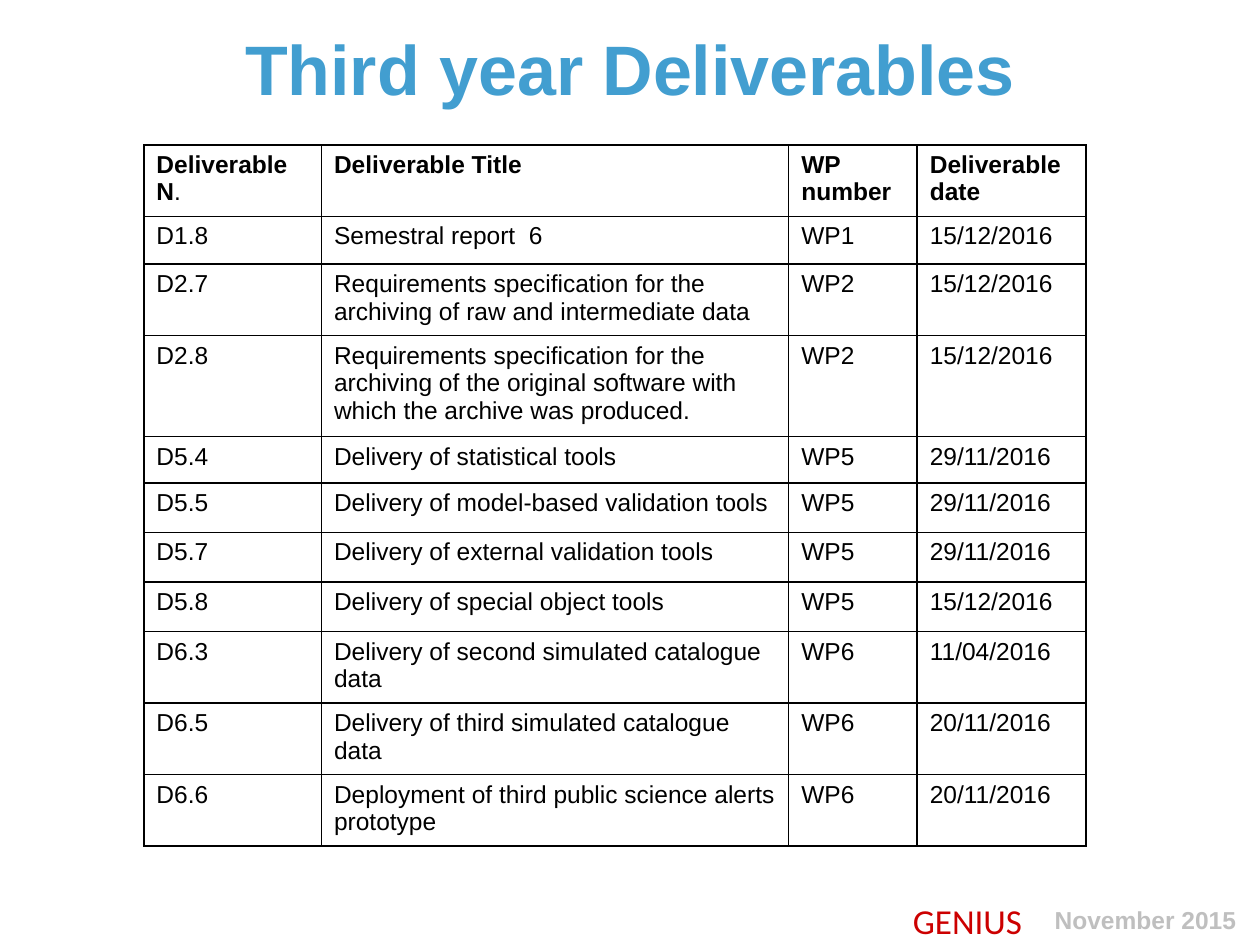
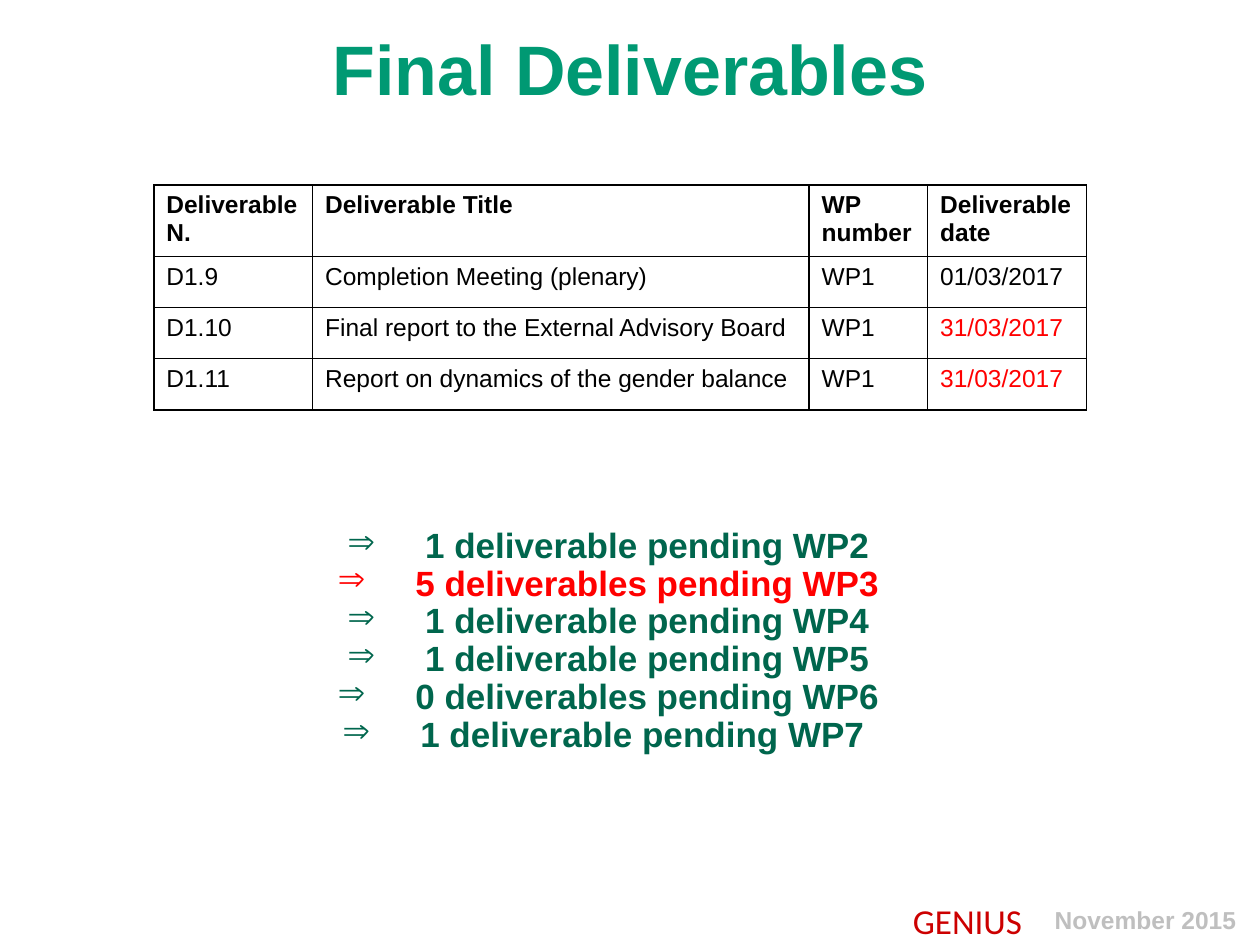
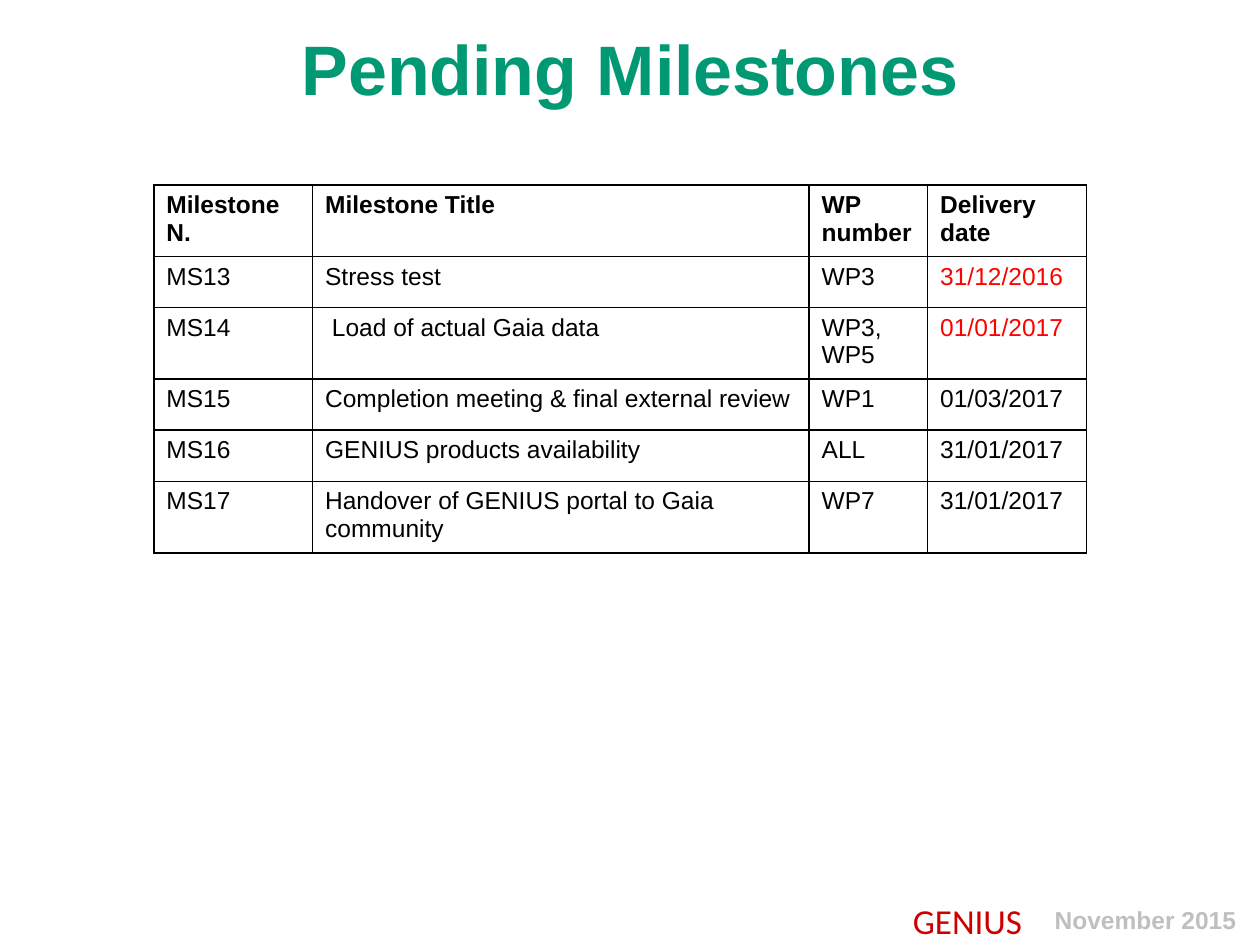
from dataclasses import dataclass

from lxml import etree
from pptx import Presentation
from pptx.dml.color import RGBColor
from pptx.enum import text
from pptx.oxml import ns
from pptx.util import Cm, Pt


@dataclass(frozen=True)
class Theme:
    """Colours, fonts and type sizes shared by the slides."""
    sky: str = "429ED0"
    green: str = "009973"
    dark_green: str = "00664D"
    red: str = "FF0000"
    project_red: str = "CC0000"
    grey: str = "BFBFBF"
    black: str = "000000"
    font: str = "Arial"
    project_font: str = "Calibri"
    title_size: int = 40
    list_size: int = 20
    small_size: int = 14
    tight: float = 0.9


THEME = Theme()
TITLE_BOX = (1.27, 0.33, 22.86, 2.29)
DATE_BOX = (21.01, 18.11, 4.29, 0.86)
PROJECT_BOX = (17.7, 18.11, 3.61, 1.02)
PENDING_BOX = (6.5, 10.52, 11.53, 4.88)
YEAR_BOX = (2.9, 2.92)
FINAL_BOX = (3.1, 3.73)
YEAR_COLUMNS = (3.58, 9.42, 2.59, 3.4)
FINAL_COLUMNS = (3.2, 10.01, 2.39, 3.2)
TWO_LINES = 1.44
FINAL_LINE = 1.03

THIRD_YEAR = [
    ("Deliverable N|.", "Deliverable Title", "WP number", "Deliverable date"),
    ("D1.8", "Semestral report  6", "WP1", "15/12/2016"),
    ("D2.7", "Requirements specification for the archiving of raw and intermediate data",
     "WP2", "15/12/2016"),
    ("D2.8", "Requirements specification for the archiving of the original software "
     "with which the archive was produced.", "WP2", "15/12/2016"),
    ("D5.4", "Delivery of statistical tools", "WP5", "29/11/2016"),
    ("D5.5", "Delivery of model-based validation tools", "WP5", "29/11/2016"),
    ("D5.7", "Delivery of external validation tools", "WP5", "29/11/2016"),
    ("D5.8", "Delivery of special object tools", "WP5", "15/12/2016"),
    ("D6.3", "Delivery of second simulated catalogue data", "WP6", "11/04/2016"),
    ("D6.5", "Delivery of third simulated catalogue data", "WP6", "20/11/2016"),
    ("D6.6", "Deployment of third public science alerts prototype", "WP6", "20/11/2016"),
]
THIRD_YEAR_HEIGHTS = [TWO_LINES, 0.96, TWO_LINES, 2.04, 0.93, 1, 1, 1] + [TWO_LINES] * 3

FINAL = [
    ("Deliverable N.", "Deliverable Title", "WP number", "Deliverable date"),
    ("D1.9", "Completion Meeting (plenary)", "WP1", "01/03/2017"),
    ("D1.10", "Final report to the External Advisory Board", "WP1", "31/03/2017"),
    ("D1.11", "Report on dynamics of the gender balance", "WP1", "31/03/2017"),
]
FINAL_HEIGHTS = [TWO_LINES] + [FINAL_LINE] * 3

MILESTONES = [
    ("Milestone N.", "Milestone Title", "WP number", "Delivery date"),
    ("MS13", "Stress test", "WP3", "31/12/2016"),
    ("MS14", " Load of actual Gaia data", "WP3, WP5", "01/01/2017"),
    ("MS15", "Completion meeting & final external review", "WP1", "01/03/2017"),
    ("MS16", "GENIUS products availability", "ALL", "31/01/2017"),
    ("MS17", "Handover of GENIUS portal to Gaia community", "WP7", "31/01/2017"),
]
MILESTONE_HEIGHTS = [TWO_LINES, FINAL_LINE, TWO_LINES, FINAL_LINE, FINAL_LINE, TWO_LINES]

PENDING = [
    ("1 deliverable pending WP2", THEME.dark_green),
    ("5 deliverables pending WP3", THEME.red),
    ("1 deliverable pending WP4", THEME.dark_green),
    ("1 deliverable pending WP5", THEME.dark_green),
    ("0 deliverables pending WP6", THEME.dark_green),
    ("1 deliverable pending WP7 ", THEME.dark_green),
]


def style(paragraph, size, color, bold=False, font=THEME.font):
    """Set the font of a whole paragraph."""
    paragraph.font.name = font
    paragraph.font.size = Pt(size)
    paragraph.font.bold = bold
    paragraph.font.color.rgb = RGBColor.from_string(color)


def add_frame(slide, box, wrap=True):
    """Add a text box and return its text frame."""
    frame = slide.shapes.add_textbox(*map(Cm, box)).text_frame
    frame.word_wrap = wrap
    return frame


def center(paragraph):
    """Centre a paragraph and tighten its lines."""
    paragraph.alignment = text.PP_ALIGN.CENTER
    paragraph.line_spacing = THEME.tight


def add_title(slide, box, words, color):
    """Add the slide title."""
    frame = add_frame(slide, box)
    frame.vertical_anchor = text.MSO_ANCHOR.MIDDLE
    title = frame.paragraphs[0]
    title.text = words
    center(title)
    style(title, THEME.title_size, color, bold=True)


def add_footer(slide, date_box, project_box):
    """Add the date and the project name."""
    date = add_frame(slide, date_box).paragraphs[0]
    date.text = "November 2015"
    style(date, THEME.small_size, THEME.grey, bold=True)
    project = add_frame(slide, project_box).paragraphs[0]
    project.text = "GENIUS"
    center(project)
    style(project, THEME.list_size, THEME.project_red, font=THEME.project_font)


def add_borders(cell):
    """Draw a thin line on the four sides of a cell."""
    properties = cell._tc.get_or_add_tcPr()
    for side in ("lnL", "lnR", "lnT", "lnB"):
        line = etree.SubElement(properties, ns.qn(f"a:{side}"), w=str(Pt(1)))
        fill = etree.SubElement(line, ns.qn("a:solidFill"))
        etree.SubElement(fill, ns.qn("a:srgbClr"), val=THEME.black)


def fill_cell(cell, words, color, bold):
    """Write a cell; words after a bar are not bold."""
    add_borders(cell)
    cell.fill.background()
    entry = cell.text_frame.paragraphs[0]
    strong, _, plain = words.partition("|")
    entry.add_run().text = strong
    style(entry, THEME.small_size, color, bold)
    if plain:
        ending = entry.add_run()
        ending.text = plain
        ending.font.bold = False


def add_schedule(slide, corner, columns, heights, rows, late=()):
    """Add a table of items, with the dates of the late ones in red."""
    box = (*corner, sum(columns), sum(heights))
    schedule = slide.shapes.add_table(len(rows), len(columns), *map(Cm, box)).table
    schedule.first_row = schedule.horz_banding = False
    for column, width in zip(schedule.columns, columns):
        column.width = Cm(width)
    for r, (row, height) in enumerate(zip(rows, heights)):
        schedule.rows[r].height = Cm(height)
        for c, words in enumerate(row):
            is_late = row[0] in late and c == len(columns) - 1
            color = THEME.red if is_late else THEME.black
            fill_cell(schedule.cell(r, c), words, color, bold=r == 0)


def add_pending(slide, box, items):
    """Add the centred list of pending deliverables."""
    frame = add_frame(slide, box, wrap=False)
    for i, (words, color) in enumerate(items):
        item = frame.add_paragraph() if i else frame.paragraphs[0]
        item.text = words
        center(item)
        properties = item._p.get_or_add_pPr()
        properties.set("marL", str(Cm(1.57)))
        properties.set("indent", str(-Cm(1.57)))
        etree.SubElement(properties, ns.qn("a:buFont"), typeface="Symbol")
        etree.SubElement(properties, ns.qn("a:buChar"), char="⇒")
        style(item, THEME.list_size, color, bold=True)


def add_page(deck, title, color):
    """Add a blank slide with its title and footer."""
    slide = deck.slides.add_slide(deck.slide_layouts[6])
    add_footer(slide, DATE_BOX, PROJECT_BOX)
    add_title(slide, TITLE_BOX, title, color)
    return slide


def main():
    """Build and save the deck."""
    deck = Presentation()
    deck.slide_width, deck.slide_height = Cm(25.4), Cm(19.05)

    third_year = add_page(deck, "Third year Deliverables", THEME.sky)
    add_schedule(third_year, YEAR_BOX, YEAR_COLUMNS, THIRD_YEAR_HEIGHTS, THIRD_YEAR)

    final = add_page(deck, "Final Deliverables", THEME.green)
    add_schedule(final, FINAL_BOX, FINAL_COLUMNS, FINAL_HEIGHTS, FINAL,
                 late=("D1.10", "D1.11"))
    add_pending(final, PENDING_BOX, PENDING)

    milestones = add_page(deck, "Pending Milestones", THEME.green)
    add_schedule(milestones, FINAL_BOX, FINAL_COLUMNS, MILESTONE_HEIGHTS, MILESTONES,
                 late=("MS13", "MS14"))

    deck.save("out.pptx")


if __name__ == "__main__":
    main()
